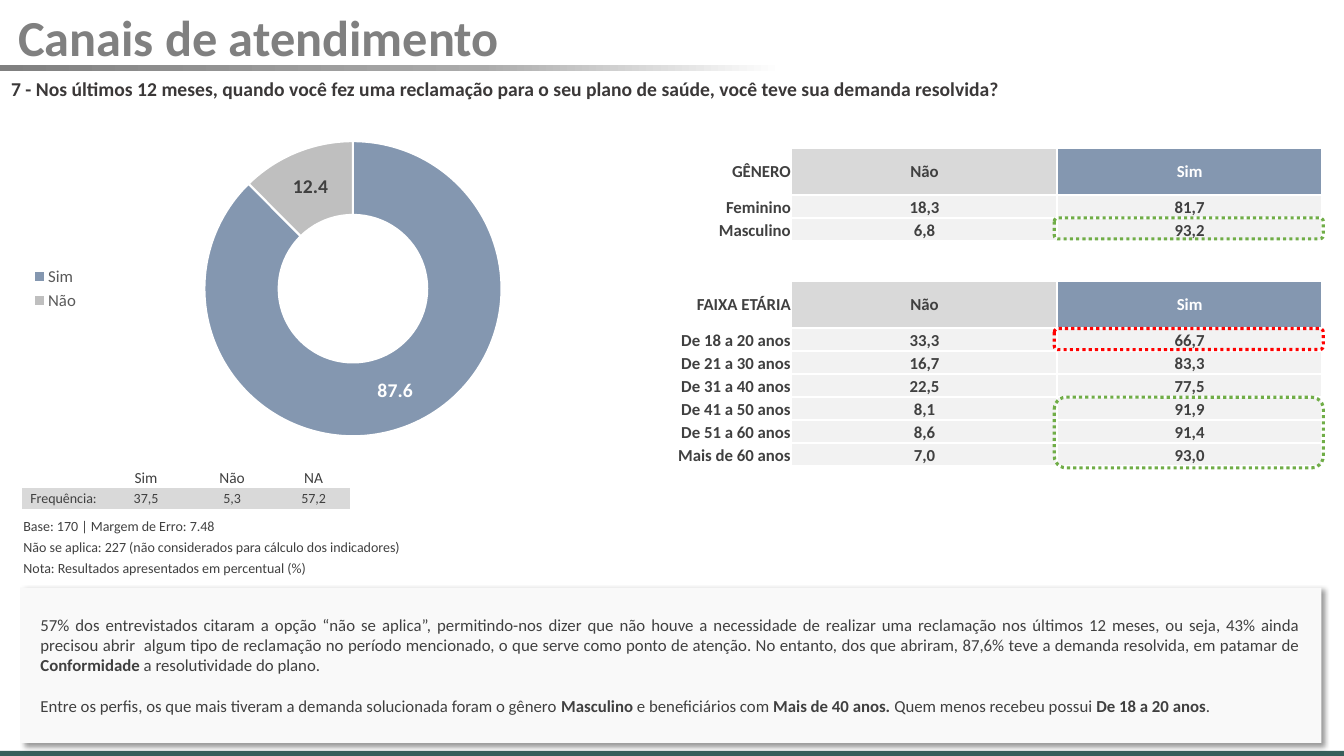
from dataclasses import dataclass

from lxml import etree
from pptx import Presentation
from pptx import util as u
from pptx.chart import data as chart_data
from pptx.dml.color import RGBColor
from pptx.enum import chart as chart_enum, shapes, text
from pptx.oxml.ns import qn


@dataclass(frozen=True)
class Theme:
    font: str = "Calibri"
    white: str = "FFFFFF"
    title: str = "808080"
    question: str = "3B3838"
    body: str = "404040"
    legend: str = "595959"
    yes: str = "8497B0"
    no: str = "BFBFBF"
    header: str = "D9D9D9"
    row: str = "F2F2F2"
    panel: str = "F9F9F9"
    footer: str = "365E5A"
    best: str = "70AD47"
    worst: str = "FF0000"
    title_size: int = 36
    emphasis_size: int = 14
    body_size: int = 12
    frequency_size: int = 11
    note_size: int = 10


THEME = Theme()
ALIGN = text.PP_ALIGN
NO_GRID_STYLE = "{2D5ABB26-0587-4C30-8999-92F81FD0307C}"

PROFILES = [
    ("GÊNERO", "Não", "Sim"),
    ("Feminino", "18,3", "81,7"),
    ("Masculino", "6,8", "93,2"),
    ("", "", ""),
    ("FAIXA ETÁRIA", "Não", "Sim"),
    ("De 18 a 20 anos", "33,3", "66,7"),
    ("De 21 a 30 anos", "16,7", "83,3"),
    ("De 31 a 40 anos", "22,5", "77,5"),
    ("De 41 a 50 anos", "8,1", "91,9"),
    ("De 51 a 60 anos", "8,6", "91,4"),
    ("Mais de 60 anos", "7,0", "93,0"),
]
# Each paragraph alternates regular and bold passages
SUMMARY = [
    ("57% dos entrevistados citaram a opção “não se aplica”, permitindo-nos dizer que não houve "
     "a necessidade de realizar uma reclamação nos últimos 12 meses, ou seja, 43% ainda precisou "
     "abrir  algum tipo de reclamação no período mencionado, o que serve como ponto de atenção. "
     "No entanto, dos que abriram, 87,6% teve a demanda resolvida, em patamar de ",
     "Conformidade ", "a resolutividade do plano."),
    ("Entre os perfis, os que mais tiveram a demanda solucionada foram o gênero ", "Masculino",
     " e beneficiários com ", "Mais de 40 anos. ", "Quem menos recebeu possui ",
     "De 18 a 20 anos", "."),
]


def rgb(color):
    return RGBColor.from_string(color)


def style_font(font, size, color, bold=False):
    font.name, font.size, font.bold = THEME.font, u.Pt(size), bold
    font.color.rgb = rgb(color)


def set_margins(box, side, top, bottom):
    box.margin_left = box.margin_right = u.Cm(side)
    box.margin_top, box.margin_bottom = u.Cm(top), u.Cm(bottom)


def add_block(slide, place, kind=shapes.MSO_SHAPE.RECTANGLE, fill=None):
    block = slide.shapes.add_shape(kind, *map(u.Cm, place))
    block.shadow.inherit = False
    block.line.fill.background()
    if fill:
        block.fill.solid()
        block.fill.fore_color.rgb = rgb(fill)
    else:
        block.fill.background()
    return block


def add_highlight(slide, place, color):
    frame = add_block(slide, place, shapes.MSO_SHAPE.ROUNDED_RECTANGLE)
    frame.line.color.rgb = rgb(color)
    frame.line.width = u.Pt(2.25)
    etree.SubElement(frame.line._get_or_add_ln(), qn("a:prstDash"), val="sysDot")


def add_title_rule(slide):
    rule = add_block(slide, (0, 1.65, 21.67, 0.13), fill=THEME.title)
    rule.fill.gradient()
    rule.fill.gradient_angle = 0
    stops = rule._element.spPr.find(qn("a:gradFill")).find(qn("a:gsLst"))
    for stop in list(stops):
        stops.remove(stop)
    for position, color in ((0, THEME.title), (56, "ABABAB"), (91, THEME.white)):
        stop = etree.SubElement(stops, qn("a:gs"), pos=str(position * 1000))
        etree.SubElement(stop, qn("a:srgbClr"), val=color)


def add_headings(slide):
    title = slide.shapes.title
    title.left, title.top, title.width, title.height = map(u.Cm, (0.2, 0.15, 33.3, 1.73))
    question = slide.shapes.add_textbox(*map(u.Cm, (0, 1.78, 33.07, 0.89)))
    set_margins(question.text_frame, 0.28, 0.15, 0.15)
    for heading, wording, align, size, color in (
            (title, "Canais de atendimento", ALIGN.LEFT, THEME.title_size, THEME.title),
            (question, "7 - Nos últimos 12 meses, quando você fez uma reclamação para o seu plano "
             "de saúde, você teve sua demanda resolvida?",
             ALIGN.JUSTIFY, THEME.emphasis_size, THEME.question)):
        frame = heading.text_frame
        frame.text = wording
        frame.word_wrap = True
        frame.auto_size = text.MSO_AUTO_SIZE.NONE
        frame.paragraphs[0].alignment = align
        style_font(frame.paragraphs[0].runs[0].font, size, color, True)
    title.text_frame.vertical_anchor = text.MSO_ANCHOR.MIDDLE
    title.text_frame.paragraphs[0].line_spacing = 0.9


def add_grid(slide, left, top, widths, heights):
    frame = slide.shapes.add_table(len(heights), len(widths), u.Cm(left), u.Cm(top),
                                   u.Cm(sum(widths)), u.Cm(sum(heights)))
    grid = frame.table
    grid.first_row = grid.horz_banding = False
    grid._tbl.tblPr.find(qn("a:tableStyleId")).text = NO_GRID_STYLE
    for column, width in zip(grid.columns, widths):
        column.width = u.Cm(width)
    for row, height in zip(grid.rows, heights):
        row.height = u.Cm(height)
    return grid


def add_borders(cell, sides):
    for side in sides:
        line = etree.SubElement(cell._tc.get_or_add_tcPr(), qn(f"a:ln{side}"),
                                w=str(u.Pt(1.5)))
        solid = etree.SubElement(line, qn("a:solidFill"))
        etree.SubElement(solid, qn("a:srgbClr"), val=THEME.white)


def fill_cell(cell, wording, size, align, fill=None, color=THEME.body, bold=False):
    set_margins(cell, 0.03, 0.03, 0)
    cell.vertical_anchor = text.MSO_ANCHOR.MIDDLE
    paragraph = cell.text_frame.paragraphs[0]
    paragraph.alignment = align
    if wording:
        paragraph.text = wording
        style_font(paragraph.runs[0].font, size, color, bold)
    else:
        etree.SubElement(paragraph._p, qn("a:endParaRPr"), sz=str(size * 100))
    if fill:
        cell.fill.solid()
        cell.fill.fore_color.rgb = rgb(fill)
    else:
        cell.fill.background()


def add_profiles(slide):
    heights = [1.19 if "Sim" in row else 0.58 if row[0] else 1.0 for row in PROFILES]
    grid = add_grid(slide, 15.62, 3.73, (4.34, 6.68, 6.68), heights)
    for r, row in enumerate(PROFILES):
        header_fills = (None, THEME.header, THEME.yes)
        for c, wording in enumerate(row):
            cell = grid.cell(r, c)
            fill = header_fills[c] if "Sim" in row else THEME.row
            add_borders(cell, ("", "RTB", "LRTB")[c])
            fill_cell(cell, wording, THEME.body_size, ALIGN.CENTER if c else ALIGN.RIGHT,
                      fill if c and wording else None,
                      THEME.white if wording == "Sim" else THEME.body, True)


def add_frequency(slide):
    grid = add_grid(slide, 0.56, 11.76, (2.08, 2.08, 2.26, 1.85), [0.53] * 2)
    for r, (row, size, fill) in enumerate((
            (("", "Sim", "Não", "NA"), THEME.frequency_size, None),
            (("Frequência:", "37,5", "5,3", "57,2"), THEME.note_size, THEME.header))):
        for c, wording in enumerate(row):
            fill_cell(grid.cell(r, c), wording, size, ALIGN.CENTER, fill)


def add_notes_on_base(slide):
    grid = add_grid(slide, 0.56, 13.0, (8.46, 1.7), [0.53] * 3)
    for r, note in enumerate((
            "Base: 170 | Margem de Erro: 7.48",
            "Não se aplica: 227 (não considerados para cálculo dos indicadores)",
            "Nota: Resultados apresentados em percentual (%)")):
        for c, wording in enumerate((note, "")):
            fill_cell(grid.cell(r, c), wording, THEME.note_size, ALIGN.LEFT)
    grid.cell(1, 0).merge(grid.cell(1, 1))


def add_answers_chart(slide):
    answers = chart_data.CategoryChartData(number_format="0.0")
    answers.categories = ["Sim", "Não"]
    answers.add_series("Series 1", (87.6, 12.4))
    chart = slide.shapes.add_chart(chart_enum.XL_CHART_TYPE.DOUGHNUT,
                                   *map(u.Cm, (0.51, 3.53, 15.11, 7.49)), answers).chart
    chart.has_title = False
    style_font(chart.font, THEME.frequency_size, THEME.body)
    chart.has_legend = True
    chart.legend.position = chart_enum.XL_LEGEND_POSITION.LEFT
    chart.legend.include_in_layout = False
    style_font(chart.legend.font, THEME.body_size, THEME.legend)
    plot = chart.plots[0]
    plot.vary_by_categories = True
    series = plot.series[0]
    for i, color in enumerate((THEME.yes, THEME.no)):
        portion = series.points[i].format
        portion.fill.solid()
        portion.fill.fore_color.rgb = rgb(color)
        portion.line.color.rgb = rgb(THEME.white)
        portion.line.width = u.Pt(1.5)
    labels = series.data_labels
    labels.show_value, labels.show_percentage = True, False
    labels.number_format, labels.number_format_is_linked = "0.0", False
    style_font(labels.font, THEME.emphasis_size, THEME.body, True)
    style_font(series.points[0].data_label.font, THEME.emphasis_size, THEME.white, True)

    # Ring position within the chart
    area = chart._chartSpace.chart.plotArea
    for old in area.findall(qn("c:layout")):
        area.remove(old)
    layout = etree.Element(qn("c:layout"))
    area.insert(0, layout)
    manual = etree.SubElement(layout, qn("c:manualLayout"))
    for tag, value in (("layoutTarget", "inner"), ("xMode", "edge"), ("yMode", "edge"),
                       ("x", "0.29"), ("y", "0"), ("w", "0.53"), ("h", "1")):
        etree.SubElement(manual, qn(f"c:{tag}"), val=value)


def add_summary(slide):
    panel = add_block(slide, (0.51, 14.81, 32.79, 3.91), fill=THEME.panel)
    effects = panel._element.spPr.find(qn("a:effectLst"))
    shadow = etree.SubElement(effects, qn("a:outerShdw"), blurRad=str(u.Pt(4)),
                              dist=str(u.Pt(3)), dir=str(45 * 60000), algn="tl", rotWithShape="0")
    tint = etree.SubElement(shadow, qn("a:srgbClr"), val="000000")
    etree.SubElement(tint, qn("a:alpha"), val="40000")
    frame = panel.text_frame
    frame.word_wrap = True
    frame.vertical_anchor = text.MSO_ANCHOR.MIDDLE
    set_margins(frame, 0.51, 0.1, 0.1)
    for i, passages in enumerate(SUMMARY):
        paragraph = frame.add_paragraph() if i else frame.paragraphs[0]
        paragraph.alignment = ALIGN.JUSTIFY
        if i:
            paragraph.space_before = u.Pt(14.6)
        for j, passage in enumerate(passages):
            run = paragraph.add_run()
            run.text = passage
            style_font(run.font, THEME.body_size, THEME.body, j % 2 == 1)


def main():
    deck = Presentation()
    deck.slide_width, deck.slide_height = u.Cm(33.87), u.Cm(19.05)
    slide = deck.slides.add_slide(deck.slide_layouts[5])
    # Heading and page bands
    add_title_rule(slide)
    add_block(slide, (0, 18.92, 33.87, 0.13), fill=THEME.footer)
    add_headings(slide)
    # Answers and profiles
    add_answers_chart(slide)
    add_frequency(slide)
    add_notes_on_base(slide)
    add_profiles(slide)
    # Best and worst results
    for top, height, color in ((5.49, 0.53, THEME.best), (8.28, 0.53, THEME.worst),
                               (10.01, 1.78, THEME.best)):
        add_highlight(slide, (26.57, top, 6.78, height), color)
    add_summary(slide)
    deck.save("out.pptx")


if __name__ == "__main__":
    main()
